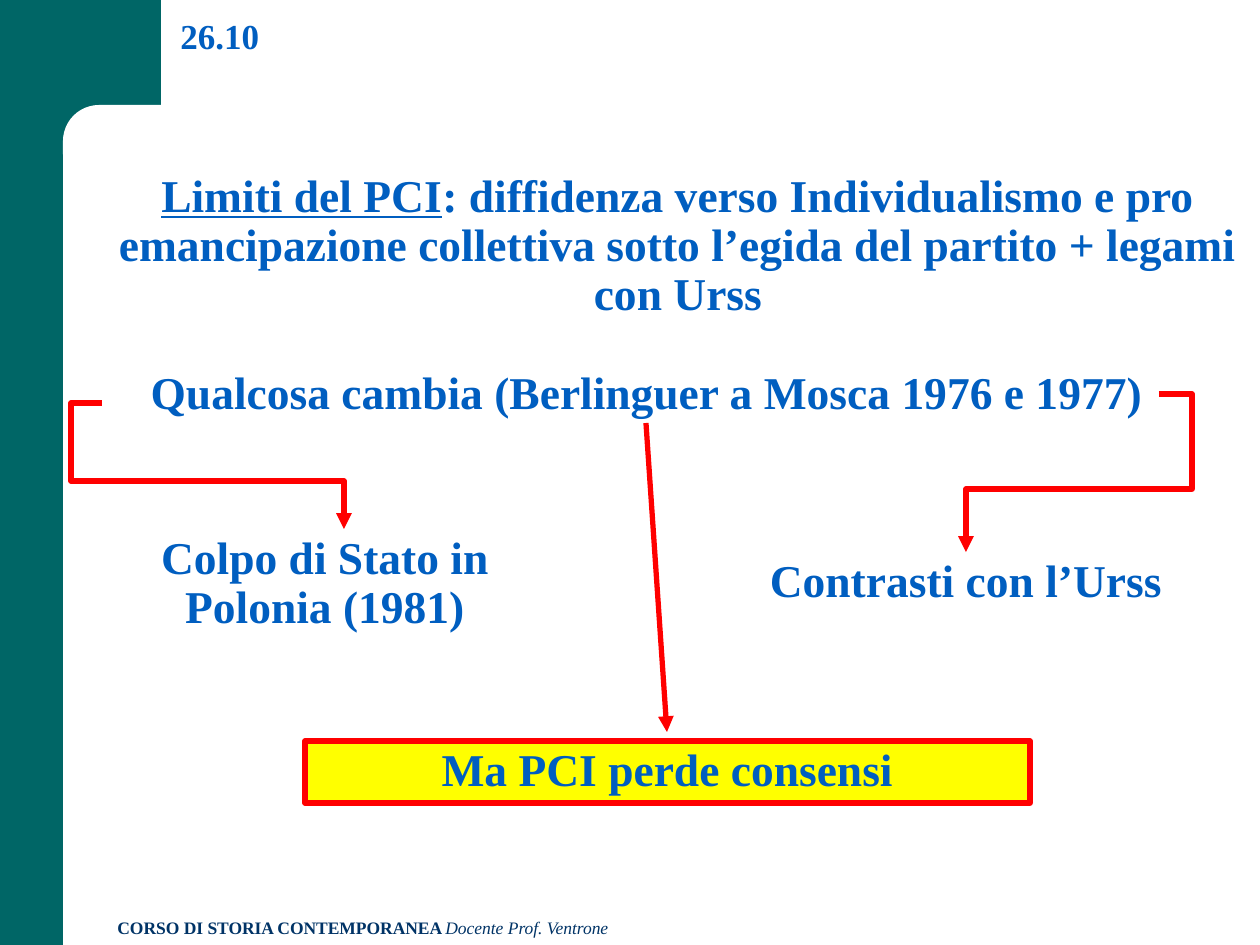
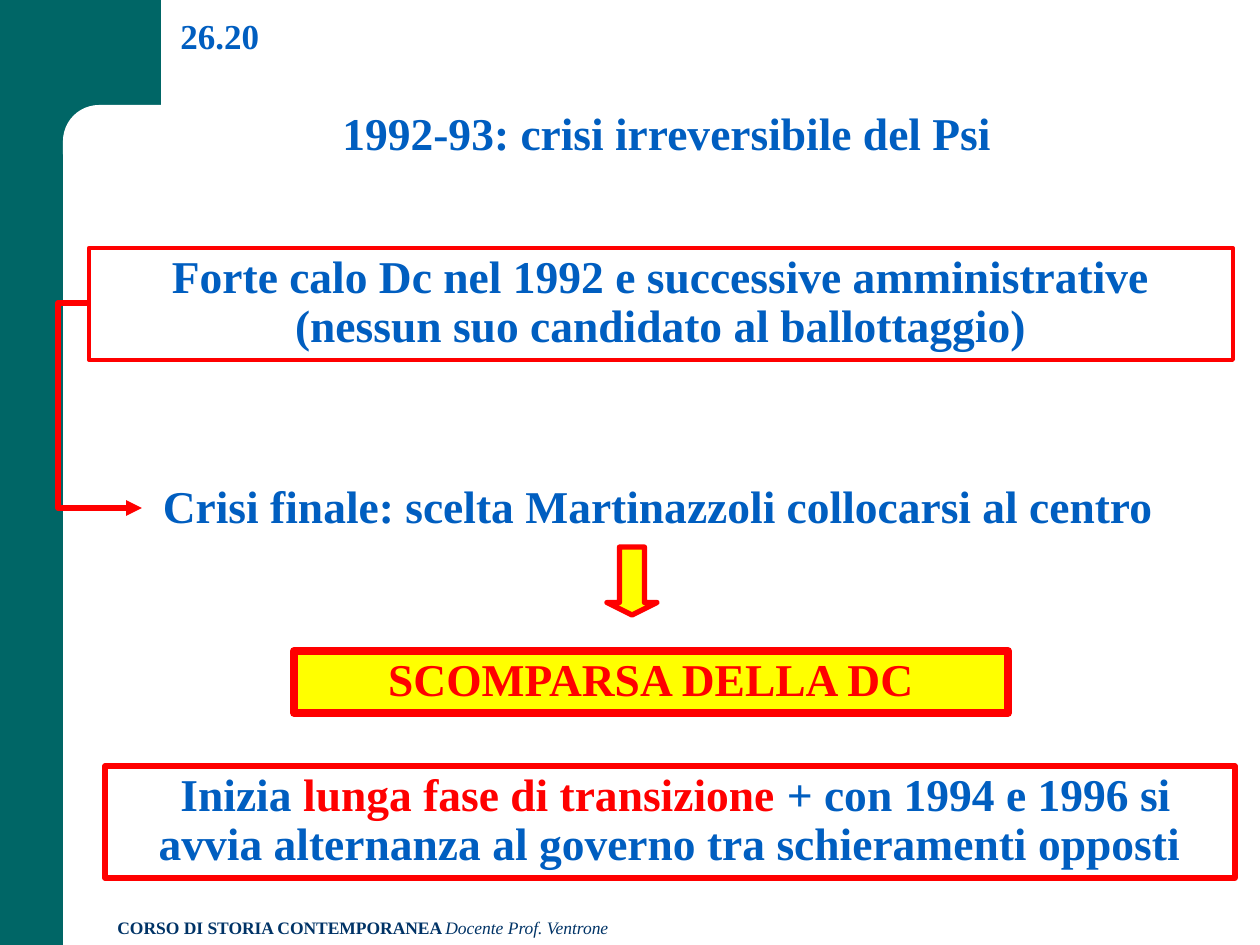
from dataclasses import dataclass
from typing import Optional

from lxml import etree
from pptx import Presentation
from pptx.dml.color import RGBColor
from pptx.enum.shapes import MSO_CONNECTOR, MSO_SHAPE
from pptx.enum.text import MSO_ANCHOR, PP_ALIGN
from pptx.oxml.ns import qn
from pptx.util import Pt

RECTANGLE = MSO_SHAPE.RECTANGLE
ROUNDED = MSO_SHAPE.ROUNDED_RECTANGLE
DOWN_ARROW = MSO_SHAPE.DOWN_ARROW
STRAIGHT = MSO_CONNECTOR.STRAIGHT
ELBOW = MSO_CONNECTOR.ELBOW
TOP, MIDDLE, BOTTOM = MSO_ANCHOR.TOP, MSO_ANCHOR.MIDDLE, MSO_ANCHOR.BOTTOM
LEFT, CENTER = PP_ALIGN.LEFT, PP_ALIGN.CENTER

TEAL = RGBColor(0x00, 0x66, 0x66)
WHITE = RGBColor(0xFF, 0xFF, 0xFF)
NAVY = RGBColor(0x00, 0x33, 0x66)
BLUE = RGBColor(0x00, 0x5E, 0xC0)
RED = RGBColor(0xFF, 0x00, 0x00)
YELLOW = RGBColor(0xFF, 0xFF, 0x00)

FONT = "Times New Roman"
PX_PER_INCH = 126
SLIDE_WIDTH, SLIDE_HEIGHT = 1260, 945


@dataclass(frozen=True)
class Box:
    left: int
    top: int
    width: int
    height: int


@dataclass(frozen=True)
class Phrase:
    text: str
    color: RGBColor = BLUE
    bold: bool = True
    italic: bool = False
    underline: bool = False


@dataclass(frozen=True)
class Statement:
    box: Box
    phrases: tuple[Phrase, ...]
    anchor: MSO_ANCHOR = TOP
    align: PP_ALIGN = CENTER
    size: int = 26
    line_spacing: float = 0.9
    wrap: bool = True
    border: float = 0
    fill: Optional[RGBColor] = None


@dataclass(frozen=True)
class Arrow:
    start: tuple[int, int]
    end: tuple[int, int]
    bends: tuple[int, ...] = ()


@dataclass(frozen=True)
class Lesson:
    number: str
    statements: tuple[Statement, ...]
    arrows: tuple[Arrow, ...]
    down_arrow: Optional[Box] = None


FOOTER = Statement(
    Box(105, 911, 777, 34),
    (Phrase("CORSO DI STORIA CONTEMPORANEA ", NAVY),
     Phrase("Docente Prof. Ventrone", NAVY, bold=False, italic=True)),
    align=LEFT, size=10, line_spacing=1.0)

LESSONS = (
    Lesson(
        "26.10",
        (Statement(
            Box(95, 166, 1166, 161),
            (Phrase("Limiti del PCI", underline=True),
             Phrase(": diffidenza verso Individualismo e pro emancipazione "
                    "collettiva sotto l’egida del partito + legami con Urss")),
            MIDDLE),
         Statement(
            Box(134, 364, 1026, 62),
            (Phrase("Qualcosa cambia (Berlinguer a Mosca 1976 e 1977)"),),
            MIDDLE, wrap=False),
         Statement(
            Box(126, 528, 398, 112),
            (Phrase("Colpo di Stato in Polonia (1981)"),), MIDDLE),
         Statement(
            Box(735, 552, 462, 62), (Phrase("Contrasti con l’Urss"),), MIDDLE),
         Statement(
            Box(305, 741, 725, 62), (Phrase("Ma PCI perde consensi"),),
            MIDDLE, border=3, fill=YELLOW)),
        (Arrow((646, 423), (667, 732)),
         Arrow((102, 403), (344, 529), (71, 481)),
         Arrow((1159, 394), (966, 552), (1192, 489)))),
    Lesson(
        "26.20",
        (Statement(
            Box(63, 105, 1197, 62),
            (Phrase(" 1992-93: crisi irreversibile del Psi"),)),
         Statement(
            Box(89, 248, 1144, 112),
            (Phrase("Forte calo Dc nel 1992 e successive amministrative "
                    "(nessun suo candidato al ballottaggio)"),),
            border=2.25),
         Statement(
            Box(142, 478, 1033, 62),
            (Phrase("Crisi finale: scelta Martinazzoli collocarsi al centro"),)),
         Statement(
            Box(294, 651, 714, 62), (Phrase("SCOMPARSA DELLA DC", RED),),
            border=4.5, fill=YELLOW),
         Statement(
            Box(105, 766, 1130, 112),
            (Phrase(" Inizia "),
             Phrase("lunga fase di transizione ", RED),
             Phrase("+ con 1994 e 1996 si avvia alternanza al governo "
                    "tra schieramenti opposti")),
            border=3)),
        (Arrow((89, 303), (142, 508), (58,)),),
        Box(607, 547, 50, 68)),
)


def px(length: int) -> int:
    return round(length * 914400 / PX_PER_INCH)


def bounds(box: Box) -> tuple[int, ...]:
    return tuple(px(n) for n in (box.left, box.top, box.width, box.height))


def add_figure(slide, kind, box: Box, fill: Optional[RGBColor], border: float = 0):
    figure = slide.shapes.add_shape(kind, *bounds(box))
    figure.shadow.inherit = False
    if fill is None:
        figure.fill.background()
    else:
        figure.fill.solid()
        figure.fill.fore_color.rgb = fill
    if border:
        figure.line.color.rgb = RED
        figure.line.width = Pt(border)
    else:
        figure.line.fill.background()
    return figure


def add_statement(slide, statement: Statement) -> None:
    if statement.border:
        holder = add_figure(slide, RECTANGLE, statement.box,
                            statement.fill, statement.border)
    else:
        holder = slide.shapes.add_textbox(*bounds(statement.box))
    frame = holder.text_frame
    frame.word_wrap = statement.wrap
    frame.vertical_anchor = statement.anchor
    paragraph = frame.paragraphs[0]
    paragraph.alignment = statement.align
    paragraph.line_spacing = statement.line_spacing
    for phrase in statement.phrases:
        run = paragraph.add_run()
        run.text = phrase.text
        font = run.font
        font.name = FONT
        font.size = Pt(statement.size)
        font.bold = phrase.bold
        font.italic = phrase.italic
        font.underline = phrase.underline
        font.color.rgb = phrase.color


def add_arrow(slide, arrow: Arrow) -> None:
    connector = slide.shapes.add_connector(
        ELBOW if arrow.bends else STRAIGHT,
        *(px(n) for n in arrow.start + arrow.end))
    connector.line.color.rgb = RED
    connector.line.width = Pt(3)
    properties = connector._element.spPr
    etree.SubElement(properties.find(qn("a:ln")), qn("a:tailEnd"), type="triangle")
    etree.SubElement(properties, qn("a:effectLst"))
    if arrow.bends:
        geometry = properties.find(qn("a:prstGeom"))
        geometry.set("prst", f"bentConnector{len(arrow.bends) + 2}")
        guides = geometry.find(qn("a:avLst"))
        steps = zip(arrow.start, arrow.end, arrow.bends)
        for index, (start, end, bend) in enumerate(steps, 1):
            ratio = round(100000 * (bend - start) / (end - start))
            etree.SubElement(guides, qn("a:gd"),
                             name=f"adj{index}", fmla=f"val {ratio}")


def add_frame(slide, number: str) -> None:
    add_figure(slide, RECTANGLE, Box(0, 0, 63, SLIDE_HEIGHT), TEAL)
    add_figure(slide, RECTANGLE, Box(0, 0, 161, 147), TEAL)
    corner = add_figure(slide, ROUNDED, Box(63, 105, 746, 84), WHITE)
    corner.adjustments[0] = 0.43
    add_statement(slide, FOOTER)
    add_statement(slide, Statement(Box(168, 0, 158, 63), (Phrase(number),),
                                   BOTTOM, LEFT, size=20))


def add_lesson(deck, lesson: Lesson) -> None:
    slide = deck.slides.add_slide(deck.slide_layouts[6])
    add_frame(slide, lesson.number)
    for statement in lesson.statements:
        add_statement(slide, statement)
    for arrow in lesson.arrows:
        add_arrow(slide, arrow)
    if lesson.down_arrow:
        pointer = add_figure(slide, DOWN_ARROW, lesson.down_arrow, YELLOW, 3)
        pointer.adjustments[0] = 0.5
        pointer.adjustments[1] = 0.25


def main() -> None:
    deck = Presentation()
    deck.slide_width = px(SLIDE_WIDTH)
    deck.slide_height = px(SLIDE_HEIGHT)
    for lesson in LESSONS:
        add_lesson(deck, lesson)
    deck.save("out.pptx")


if __name__ == "__main__":
    main()
